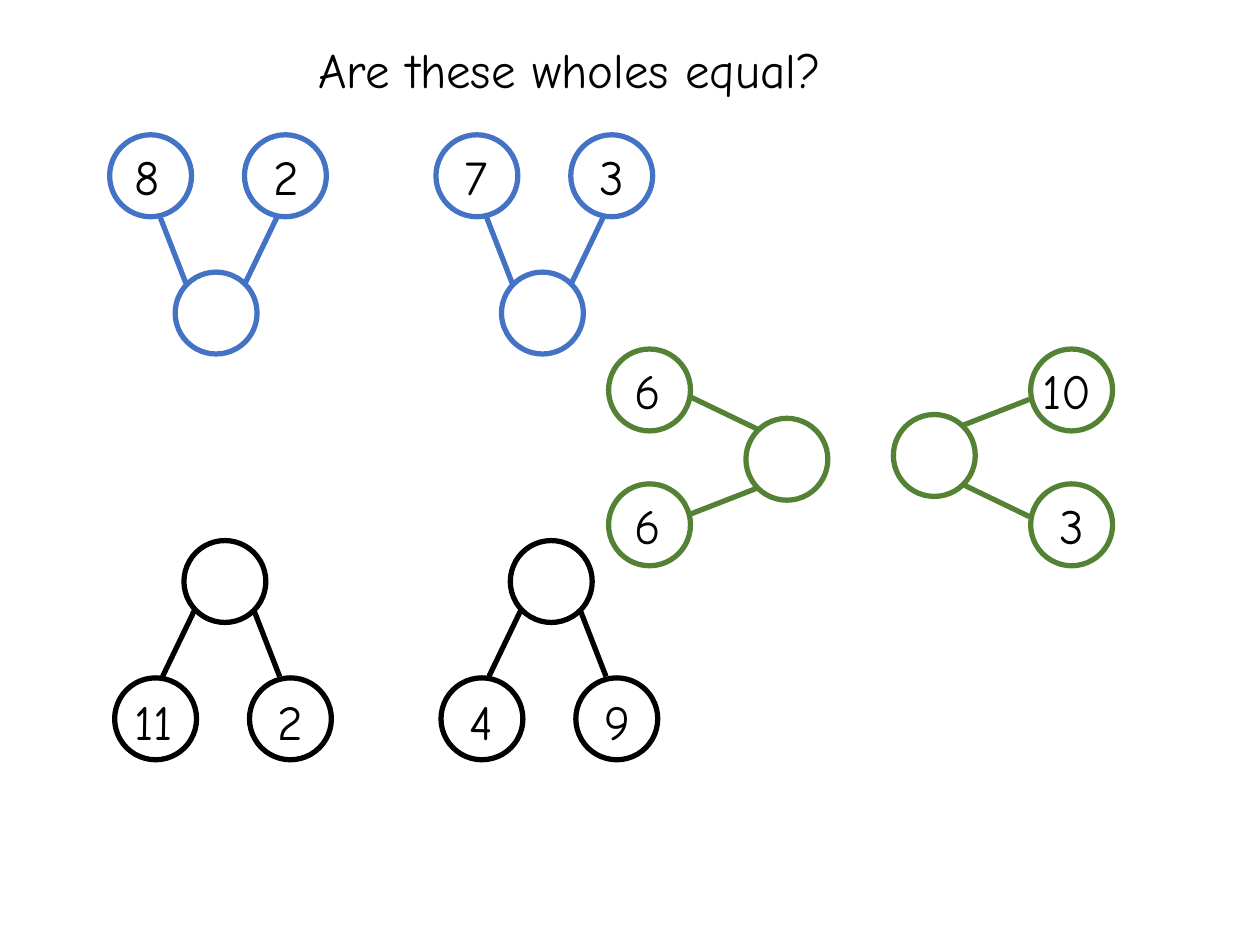
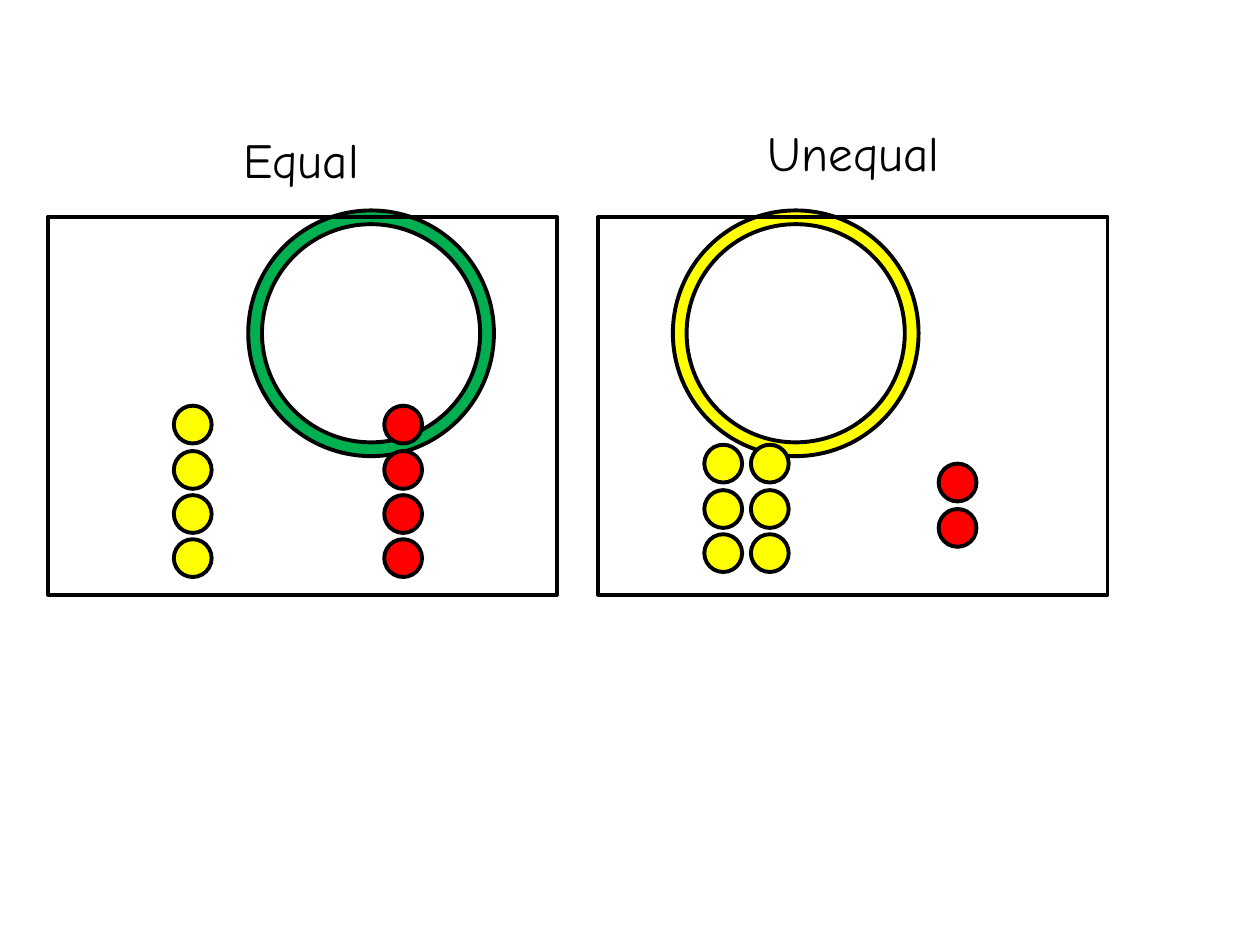
"""Build two slides on equal and unequal wholes: part-whole models and counters."""
from pptx import Presentation
from pptx.dml.color import RGBColor
from pptx.enum.shapes import MSO_CONNECTOR, MSO_SHAPE
from pptx.enum.text import MSO_ANCHOR, MSO_AUTO_SIZE, PP_ALIGN
from pptx.oxml import parse_xml
from pptx.oxml.ns import nsdecls
from pptx.util import Pt

PX = 9144
OVAL, RECT, DONUT = MSO_SHAPE.OVAL, MSO_SHAPE.RECTANGLE, MSO_SHAPE.DONUT
STRAIGHT = MSO_CONNECTOR.STRAIGHT
TOP, CENTER, NO_FIT = MSO_ANCHOR.TOP, PP_ALIGN.CENTER, MSO_AUTO_SIZE.NONE
BLACK, WHITE, BLUE, LEAF = "000000", "FFFFFF", "4472C4", "548235"
YELLOW, RED, GREEN = "FFFF00", "FF0000", "00B050"
rgb = RGBColor.from_string
FONT = {"name": "Comic Neue", "size": Pt(28), "bold": False}


def draw(shapes, kind, box, fill, line, width):
    sp = shapes.add_shape(kind, *[v * PX for v in box])
    sp.shadow.inherit = False
    if fill:
        sp.fill.solid()
        sp.fill.fore_color.rgb = rgb(fill)
    else:
        sp.fill.background()
    sp.line.color.rgb = rgb(line)
    sp.line.width = Pt(width)
    return sp


def write(sp, box, text, wrap=True):
    sp.left, sp.top, sp.width, sp.height = [v * PX for v in box]
    tf = sp.text_frame
    frame = {"word_wrap": wrap, "auto_size": NO_FIT, "vertical_anchor": TOP}
    for name, value in frame.items():
        setattr(tf, name, value)
    p = tf.paragraphs[0]
    p.alignment = CENTER
    r = p.add_run()
    r.text = text
    for name, value in FONT.items():
        setattr(r.font, name, value)
    r.font.color.rgb = rgb(BLACK)


prs = Presentation()
prs.slide_width, prs.slide_height = 1000 * PX, 750 * PX
TITLE_ONLY, BLANK = prs.slide_layouts[5], prs.slide_layouts[6]

s = prs.slides.add_slide(TITLE_ONLY)
write(s.shapes.title, (69, 26, 766, 57), "Are these wholes equal?")

DIAMETER, RADIUS = 65, 32
BRANCHES = [
    ((-55, 109), (-23, 22), (-49, 76)),
    ((52, 109), (23, 22), (44, 76)),
]
TURNS = {
    "down": lambda x, y: (x, y),
    "left": lambda x, y: (-y, x),
    "up": lambda x, y: (-x, -y),
    "right": lambda x, y: (y, -x),
}
models = [
    (709, 329, "right", LEAF, 4, [("3", 851), ("10", 847)]),
    (139, 216, "up", BLUE, 4, [("2", 227), ("8", 117)]),
    (398, 216, "up", BLUE, 4, [("3", 486), ("7", 378)]),
    (592, 332, "left", LEAF, 4, [("6", 514), ("6", 514)]),
    (146, 429, "down", BLACK, 6, [("11", 122), ("2", 230)]),
    (405, 429, "down", BLACK, 6, [("4", 382), ("9", 490)]),
]
for x, y, direction, color, drop, parts in models:
    turn = TURNS[direction]
    group = s.shapes.add_group_shape()
    draw(group.shapes, OVAL, (x, y, DIAMETER, DIAMETER), WHITE, color, 3)
    for (part, start, end), (number, middle) in zip(BRANCHES, parts):
        dx, dy = turn(*part)
        draw(group.shapes, OVAL, (x + dx, y + dy, DIAMETER, DIAMETER),
             WHITE, color, 3)
        ends = [(o + RADIUS + d) * PX for point in (start, end)
                for o, d in zip((x, y), turn(*point))]
        link = group.shapes.add_connector(STRAIGHT, *ends)
        link.line.color.rgb = rgb(color)
        link.line.width = Pt(3)
        link._element.spPr.append(parse_xml(f"<a:effectLst {nsdecls('a')}/>"))
        width = 48 if len(number) == 1 else 80
        write(s.shapes.add_textbox(0, 0, 0, 0),
              (middle - width // 2, y + dy + drop, width, 57), number)

s = prs.slides.add_slide(BLANK)
for x, color in [(534, YELLOW), (197, GREEN)]:
    ring = draw(s.shapes, DONUT, (x, 167, 195, 195), color, BLACK, 2.25)
    ring.adjustments[0] = 0.056
for x in (38, 475):
    draw(s.shapes, RECT, (x, 172, 404, 300), None, BLACK, 2.25)

COUNTER, PITCH = 30, 35.5
columns = [
    (138, 322, 4, YELLOW),
    (305, 322, 4, RED),
    (559, 353, 3, YELLOW),
    (596, 353, 3, YELLOW),
    (745, 368, 2, RED),
]
for x, y, count, color in columns:
    for i in range(count):
        draw(s.shapes, OVAL, (x, y + round(i * PITCH), COUNTER, COUNTER),
             color, BLACK, 2.25)

for box, text in [((181, 98, 116, 57), "Equal"), ((596, 92, 163, 57), "Unequal")]:
    write(s.shapes.add_textbox(0, 0, 0, 0), box, text, wrap=False)

prs.save("out.pptx")
